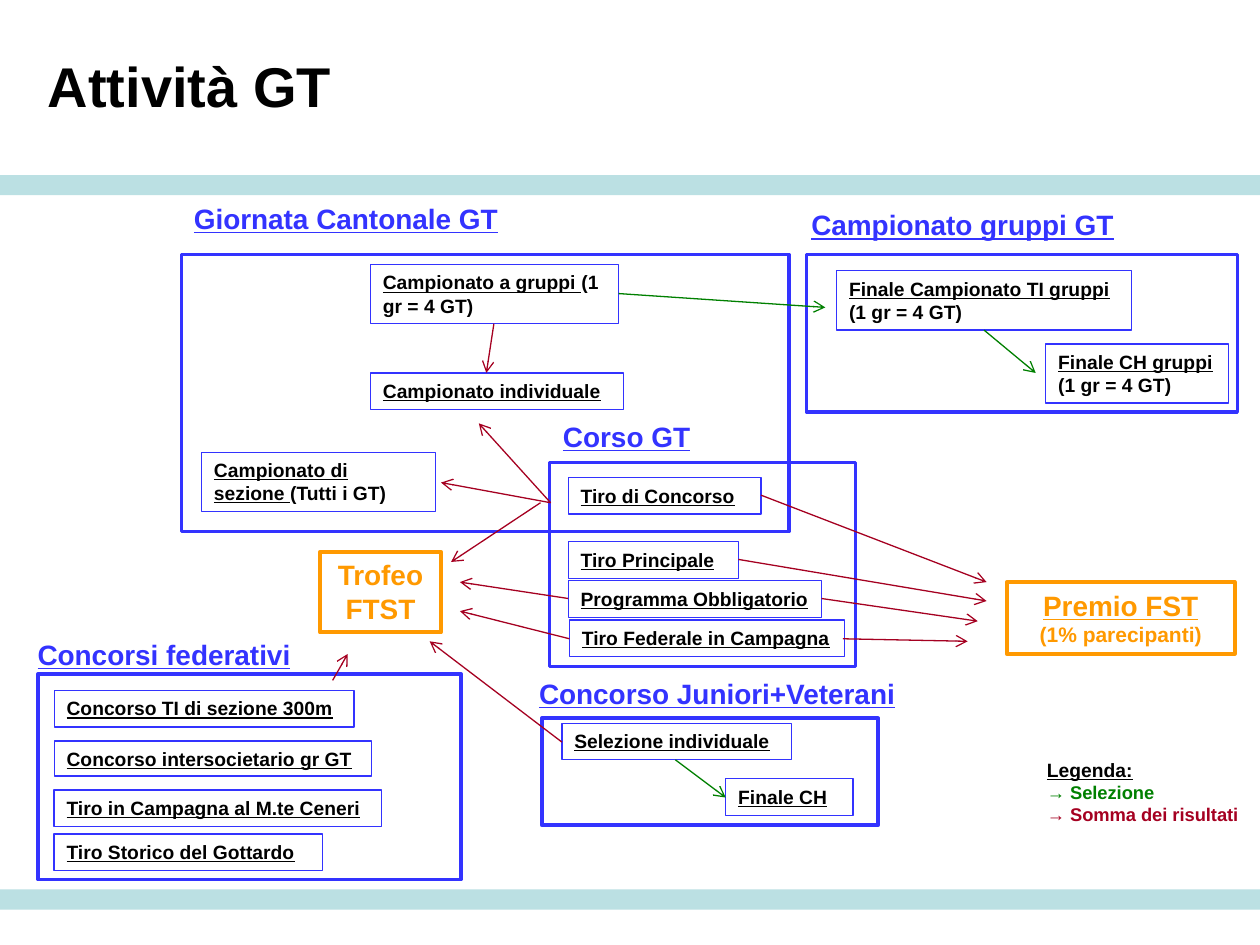
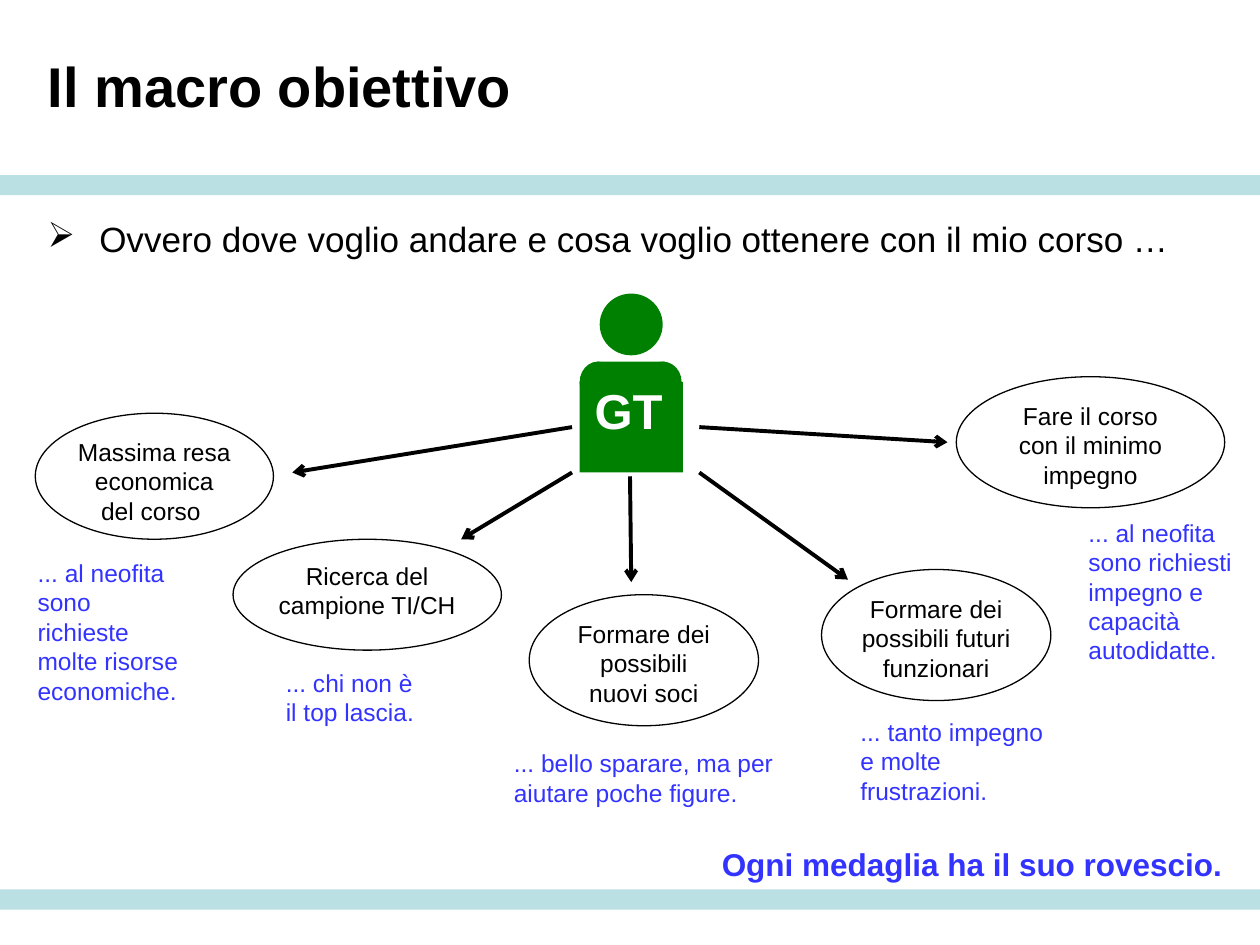
from dataclasses import dataclass
from typing import Any, NamedTuple

from lxml.etree import SubElement
from pptx import Presentation
from pptx.dml.color import RGBColor
from pptx.enum.shapes import MSO_CONNECTOR, MSO_SHAPE
from pptx.enum.text import MSO_ANCHOR, MSO_AUTO_SIZE, PP_ALIGN
from pptx.oxml.ns import qn
from pptx.util import Inches, Length, Pt

# The slide is a grid of 1000 columns by 750 rows; all places count its cells.
WIDE, HIGH = Inches(10), Inches(7.5)
COLS, ROWS = 1000, 750


@dataclass(frozen=True)
class Theme:
    font: str = "Arial"
    black: str = "000000"
    white: str = "FFFFFF"
    blue: str = "3333FF"
    green: str = "008000"
    red: str = "A50021"
    gold: str = "FF9900"
    band: str = "BBE0E3"
    title: float = 32
    badge: float = 28
    lead: float = 20
    close: float = 18
    head: float = 16
    body: float = 14
    note: float = 12
    card: float = 11
    key: float = 10.5
    hair: float = 0.75
    frame: float = 2
    bold: float = 2.25


LOOK = Theme()


class Area(NamedTuple):
    left: int
    top: int
    width: int
    height: int


class Run(NamedTuple):
    text: str
    size: float
    ink: str = LOOK.black
    bold: bool = True
    under: bool = False


class Card(NamedTuple):
    area: Area
    text: str
    tail: str = ""


class Panel(NamedTuple):
    label: str
    spot: Area
    frame: Area
    cards: list[Card]


class Arrow(NamedTuple):
    start: tuple[int, int]
    end: tuple[int, int]


class Goal(NamedTuple):
    oval: Area
    text: str
    arrow: Arrow
    spot: Area
    snag: str


Lines = list[list[Run]]


def col(n: float) -> Length:
    return Length(round(WIDE * n / COLS))


def row(n: float) -> Length:
    return Length(round(HIGH * n / ROWS))


def place(area: Area) -> tuple[Length, Length, Length, Length]:
    return col(area.left), row(area.top), col(area.width), row(area.height)


def tint(ink: str) -> RGBColor:
    return RGBColor.from_string(ink)


def apply(item: Any, form: dict[str, Any]) -> None:
    for name, value in form.items():
        setattr(item, name, value)


def write(shape: Any, lines: Lines, align: PP_ALIGN = PP_ALIGN.LEFT,
          anchor: MSO_ANCHOR = MSO_ANCHOR.TOP, inset: int | None = None) -> None:
    frame = shape.text_frame
    apply(frame, {"word_wrap": True, "auto_size": MSO_AUTO_SIZE.NONE,
                  "vertical_anchor": anchor})
    if inset is not None:
        sides = ("left", "top", "right", "bottom")
        apply(frame, {f"margin_{side}": col(inset) for side in sides})
    for i, runs in enumerate(lines):
        para = frame.add_paragraph() if i else frame.paragraphs[0]
        para.alignment = align
        for run in runs:
            part = para.add_run()
            part.text = run.text
            apply(part.font, {"name": LOOK.font, "size": Pt(run.size),
                              "bold": run.bold, "underline": run.under})
            part.font.color.rgb = tint(run.ink)


def add_text(shapes: Any, area: Area, lines: Lines) -> Any:
    box = shapes.add_textbox(*place(area))
    write(box, lines)
    return box


def add_form(shapes: Any, kind: MSO_SHAPE, area: Area, fill: str = "",
             edge: str = "", width: float = LOOK.hair) -> Any:
    form = shapes.add_shape(kind, *place(area))
    form.shadow.inherit = False
    if fill:
        form.fill.solid()
        form.fill.fore_color.rgb = tint(fill)
    else:
        form.fill.background()
    if edge:
        form.line.color.rgb = tint(edge)
        form.line.width = Pt(width)
    else:
        form.line.fill.background()
    return form


def add_arrow(shapes: Any, arrow: Arrow, ink: str, width: float = LOOK.hair) -> None:
    (x, y), (u, v) = arrow
    link = shapes.add_connector(MSO_CONNECTOR.STRAIGHT, col(x), row(y), col(u), row(v))
    link.line.color.rgb = tint(ink)
    link.line.width = Pt(width)
    props = link._element.spPr
    SubElement(props.find(qn("a:ln")), qn("a:tailEnd"), type="arrow")
    SubElement(props, qn("a:effectLst"))


def add_page(deck: Any, title: str) -> Any:
    """Add a title-only slide with its two bands."""
    page = deck.slides.add_slide(deck.slide_layouts[5])
    for top in (139, 706):
        add_form(page.shapes, MSO_SHAPE.RECTANGLE, Area(0, top, COLS, 16), LOOK.band)
    head = page.shapes.title
    left, top, width, height = place(Area(28, 5, 833, 125))
    apply(head, {"left": left, "top": top, "width": width, "height": height})
    write(head, [[Run(title, LOOK.title)]], anchor=MSO_ANCHOR.MIDDLE)
    return page.shapes


PANELS = [
    Panel("Giornata Cantonale GT", Area(144, 155, 335, 37), Area(144, 202, 482, 220), [
        Card(Area(294, 210, 197, 47), "Campionato a gruppi ", "(1 gr = 4 GT)"),
        Card(Area(160, 359, 186, 47), "Campionato di sezione ", "(Tutti i GT)"),
        Card(Area(294, 296, 201, 29), "Campionato individuale")]),
    Panel("Campionato gruppi GT", Area(634, 160, 349, 37), Area(640, 202, 342, 125), [
        Card(Area(664, 215, 234, 47), "Finale Campionato TI gruppi ", "(1 gr = 4 GT)"),
        Card(Area(830, 273, 145, 47), "Finale CH gruppi ", "(1 gr = 4 GT)")]),
    Panel("Corso GT", Area(437, 328, 157, 37), Area(436, 367, 243, 162), [
        Card(Area(451, 379, 153, 29), "Tiro di Concorso"),
        Card(Area(451, 430, 135, 29), "Tiro Principale"),
        Card(Area(451, 461, 201, 29), "Programma Obbligatorio"),
        Card(Area(452, 492, 218, 29), "Tiro Federale in Campagna")]),
    Panel("Concorso Juniori+Veterani", Area(418, 532, 317, 37), Area(430, 570, 267, 85), [
        Card(Area(446, 574, 182, 29), "Selezione individuale"),
        Card(Area(576, 618, 101, 29), "Finale CH")]),
    Panel("Concorsi federativi", Area(20, 501, 257, 37), Area(30, 535, 336, 163), [
        Card(Area(43, 548, 238, 29), "Concorso TI di sezione 300m"),
        Card(Area(43, 588, 252, 28), "Concorso intersocietario gr GT"),
        Card(Area(43, 627, 260, 29), "Tiro in Campagna al M.te Ceneri"),
        Card(Area(43, 662, 213, 29), "Tiro Storico del Gottardo")]),
]

FLOWS = {
    LOOK.green: [
        Arrow((491, 233), (655, 244)),
        Arrow((781, 262), (822, 296)),
        Arrow((536, 603), (576, 633)),
    ],
    LOOK.red: [
        Arrow((437, 399), (380, 336)),
        Arrow((392, 257), (386, 296)),
        Arrow((437, 399), (350, 383)),
        Arrow((429, 399), (358, 446)),
        Arrow((604, 393), (783, 462)),
        Arrow((586, 444), (783, 477)),
        Arrow((652, 475), (776, 493)),
        Arrow((669, 507), (768, 509)),
        Arrow((451, 475), (365, 462)),
        Arrow((452, 507), (365, 485)),
        Arrow((446, 589), (341, 509)),
        Arrow((264, 540), (276, 519)),
    ],
}

PRIZES: list[tuple[Area, Lines]] = [
    (Area(799, 462, 181, 57), [[Run("Premio FST", LOOK.head, LOOK.gold, under=True)],
                               [Run("(1% parecipanti)", LOOK.note, LOOK.gold)]]),
    (Area(254, 438, 96, 64), [[Run("Trofeo FTST", LOOK.head, LOOK.gold)]]),
]

LEGEND: Lines = [
    [Run("Legenda:", LOOK.card, under=True)],
    [Run("→ Selezione", LOOK.key, LOOK.green)],
    [Run("→ Somma dei risultati", LOOK.key, LOOK.red)],
]

GOALS = [
    Goal(Area(28, 328, 189, 100), "Massima resa economica del corso ",
         Arrow((454, 339), (232, 375)), Area(20, 438, 134, 128),
         "... al neofita sono richieste molte risorse economiche."),
    Goal(Area(185, 428, 213, 88), "Ricerca del campione TI/CH ",
         Arrow((454, 375), (366, 428)), Area(217, 525, 134, 57),
         "... chi non è il top lascia."),
    Goal(Area(420, 472, 182, 104), "Formare dei possibili nuovi soci",
         Arrow((500, 378), (501, 462)), Area(398, 589, 232, 57),
         "... bello sparare, ma per aiutare poche figure."),
    Goal(Area(652, 452, 182, 104), "Formare dei possibili futuri funzionari",
         Arrow((555, 375), (673, 460)), Area(673, 564, 181, 57),
         "... tanto impegno e molte frustrazioni."),
    Goal(Area(759, 299, 213, 104), "Fare il corso con il minimo impegno",
         Arrow((555, 339), (752, 351)), Area(854, 406, 134, 128),
         "... al neofita sono richiesti impegno e capacità autodidatte."),
]

FIGURE = [
    (MSO_SHAPE.RECTANGLE, Area(474, 287, 54, 26)),
    (MSO_SHAPE.RECTANGLE, Area(460, 303, 82, 72)),
    (MSO_SHAPE.OVAL, Area(460, 287, 29, 33)),
    (MSO_SHAPE.OVAL, Area(511, 287, 30, 32)),
    (MSO_SHAPE.OVAL, Area(476, 233, 50, 49)),
]


def add_panel(shapes: Any, panel: Panel) -> None:
    add_text(shapes, panel.spot, [[Run(panel.label, LOOK.head, LOOK.blue, under=True)]])
    add_form(shapes, MSO_SHAPE.RECTANGLE, panel.frame, edge=LOOK.blue, width=LOOK.frame)
    for card in panel.cards:
        runs = [Run(card.text, LOOK.card, under=True)]
        if card.tail:
            runs.append(Run(card.tail, LOOK.card))
        write(add_form(shapes, MSO_SHAPE.RECTANGLE, card.area, edge=LOOK.blue), [runs])


def add_goal(shapes: Any, goal: Goal) -> None:
    group = shapes.add_group_shape().shapes
    oval = add_form(group, MSO_SHAPE.OVAL, goal.oval, edge=LOOK.black)
    write(oval, [[Run(goal.text, LOOK.body, bold=False)]], PP_ALIGN.CENTER, inset=4)
    add_arrow(group, goal.arrow, LOOK.black, LOOK.bold)
    add_text(shapes, goal.spot, [[Run(goal.snag, LOOK.body, LOOK.blue, bold=False)]])


def add_figure(shapes: Any) -> None:
    group = shapes.add_group_shape().shapes
    for kind, area in FIGURE:
        add_form(group, kind, area, LOOK.green)
    add_text(group, Area(462, 297, 78, 57), [[Run("GT", LOOK.badge, LOOK.white)]])


def add_lead(shapes: Any, text: str) -> None:
    box = shapes.add_textbox(*place(Area(28, 168, 944, 44)))
    props = box.text_frame.paragraphs[0]._p.get_or_add_pPr()
    apply_indent = {"marL": col(41), "indent": -col(41)}
    for name, value in apply_indent.items():
        props.set(name, str(value))
    SubElement(props, qn("a:buChar"), char="➢")
    write(box, [[Run(text, LOOK.lead, bold=False)]])


def draw_events(deck: Any) -> None:
    shapes = add_page(deck, "Attività GT")
    for panel in PANELS:
        add_panel(shapes, panel)
    for area, lines in PRIZES:
        box = add_form(shapes, MSO_SHAPE.RECTANGLE, area, edge=LOOK.gold, width=LOOK.bold)
        write(box, lines, PP_ALIGN.CENTER)
    for ink, arrows in FLOWS.items():
        for arrow in arrows:
            add_arrow(shapes, arrow, ink)
    add_text(shapes, Area(821, 597, 177, 64), LEGEND)


def draw_goals(deck: Any) -> None:
    shapes = add_page(deck, "Il macro obiettivo")
    add_lead(shapes, "Ovvero dove voglio andare e cosa voglio ottenere con il mio corso …")
    add_figure(shapes)
    for goal in GOALS:
        add_goal(shapes, goal)
    add_text(shapes, Area(563, 666, 425, 40),
             [[Run("Ogni medaglia ha il suo rovescio.", LOOK.close, LOOK.blue)]])


def main() -> None:
    deck = Presentation()
    apply(deck, {"slide_width": WIDE, "slide_height": HIGH})
    draw_events(deck)
    draw_goals(deck)
    deck.save("out.pptx")


if __name__ == "__main__":
    main()
